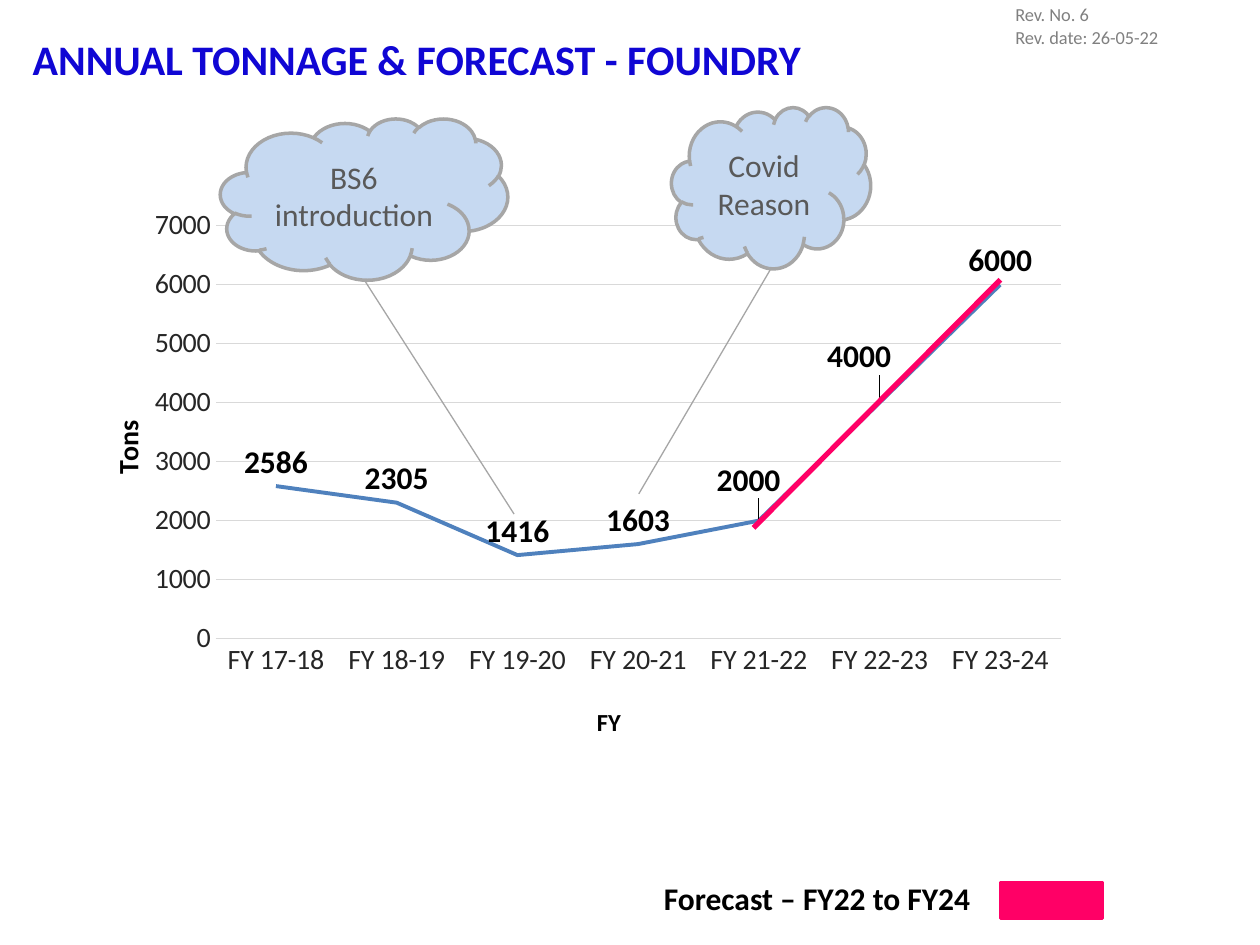
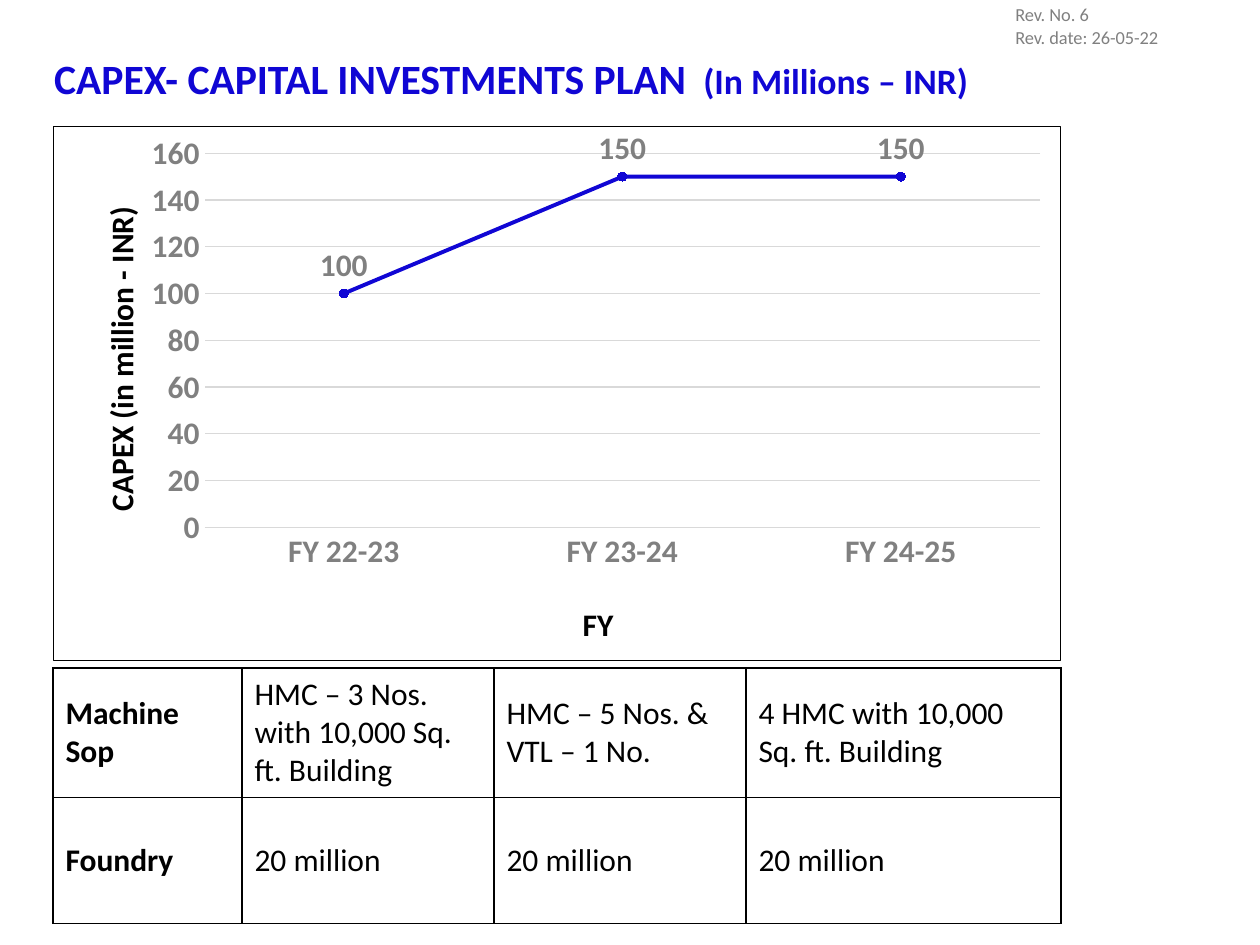
"""Build two slides on foundry tonnage and capital investment plans."""
import dataclasses

import lxml.etree
import pptx
import pptx.chart.data
import pptx.dml.color
import pptx.enum.chart
import pptx.enum.shapes
import pptx.enum.text
import pptx.oxml.ns
import pptx.util

COLS, ROWS = 20, 15
WIDE, HIGH = pptx.util.Inches(10), pptx.util.Inches(7.5)
qn = pptx.oxml.ns.qn
Kind = pptx.enum.chart.XL_CHART_TYPE
Middle = pptx.enum.text.MSO_ANCHOR.MIDDLE
Align = pptx.enum.text.PP_ALIGN
Form = pptx.enum.shapes.MSO_SHAPE


@dataclasses.dataclass(frozen=True)
class Theme:
    """Hold the colours, font and type sizes."""
    font: str = "Calibri"
    title: str = "1006D4"
    ink: str = "000000"
    dark: str = "262626"
    slate: str = "595959"
    grey: str = "808080"
    edge: str = "A6A6A6"
    grid: str = "D9D9D9"
    cloud: str = "C6D9F1"
    blue: str = "4F81BD"
    pink: str = "FF0066"
    head: float = 24
    long: float = 23.8
    unit: float = 20.4
    body: float = 18
    axis: float = 16
    small: float = 14
    note: float = 10.5


@dataclasses.dataclass(frozen=True)
class Plot:
    """Describe one line chart."""
    kind: int
    cats: tuple
    vals: tuple
    top: int
    step: int
    line: str
    area: tuple
    names: tuple
    tick: tuple
    label: str
    border: bool = False
    shifts: tuple = ()


THEME = Theme()


def rgb(code):
    """Turn a hex code into a colour."""
    return pptx.dml.color.RGBColor.from_string(code)


def cell(col, row):
    """Turn grid columns and rows into lengths."""
    return round(col * WIDE / COLS), round(row * HIGH / ROWS)


def box(left, top, wide, high):
    """Turn a grid area into left, top, width and height."""
    return cell(left, top) + cell(wide, high)


def style(font, size, color, bold=False):
    """Set the look of a font."""
    font.name, font.bold, font.size = THEME.font, bold, pptx.util.Pt(size)
    font.color.rgb = rgb(color)


def write(para, text, size, color, bold=False):
    """Add one run to a paragraph."""
    run = para.add_run()
    run.text = text
    style(run.font, size, color, bold)


def stroke(line, color, width):
    """Set the colour and width of a line."""
    line.color.rgb = rgb(color)
    line.width = pptx.util.Pt(width)


def node(parent, tag, index=None, **attrs):
    """Add an XML child, at an index if one is given."""
    child = lxml.etree.SubElement(parent, qn(tag), attrs)
    if index is not None:
        parent.insert(index, child)
    return child


def paint(parent, tag, color, width):
    """Add an XML line with a solid colour."""
    line = node(parent, tag, w=str(pptx.util.Pt(width)))
    node(node(line, "a:solidFill"), "a:srgbClr", val=color)


def place(parent, index, spots, edge=True):
    """Give a chart part a layout in shares of the chart."""
    for old in parent.findall(qn("c:layout")):
        parent.remove(old)
    plan = node(node(parent, "c:layout", index), "c:manualLayout")
    if len(spots) == 4:
        node(plan, "c:layoutTarget", val="inner")
    if edge:
        node(plan, "c:xMode", val="edge")
        node(plan, "c:yMode", val="edge")
    for key, spot in zip("xywh", spots):
        node(plan, "c:" + key, val=str(spot))


def title(slide, area, runs):
    """Fill and move the title placeholder."""
    shape = slide.shapes.title
    shape.left, shape.top, shape.width, shape.height = box(*area)
    frame = shape.text_frame
    frame.auto_size = pptx.enum.text.MSO_AUTO_SIZE.NONE
    frame.vertical_anchor = Middle
    para = frame.paragraphs[0]
    para.alignment = Align.LEFT
    for text, size in runs:
        write(para, text, size, THEME.title, True)


def label(slide, area, lines, size, color, bold=False):
    """Add a text box with one paragraph a line."""
    shape = slide.shapes.add_textbox(*box(*area))
    frame = shape.text_frame
    frame.word_wrap = True
    for index, text in enumerate(lines):
        para = frame.add_paragraph() if index else frame.paragraphs[0]
        write(para, text, size, color, bold)
    return shape


def stamp(slide):
    """Put the revision note on the shared layout."""
    note = label(slide, (15.92, -0.04, 3.58, 0.94),
                 ("Rev. No. 6", "Rev. date: 26-05-22"), THEME.note, THEME.grey)
    note.element.xpath("./p:nvSpPr/p:cNvPr")[0].set("id", "20")
    slide.slide_layout.shapes.element.append(note.element)


def block(slide, form, area, fill, edge, text=""):
    """Add a filled shape, with centred text if any."""
    shape = slide.shapes.add_shape(form, *box(*area))
    shape.shadow.inherit = False
    shape.fill.solid()
    shape.fill.fore_color.rgb = rgb(fill)
    stroke(shape.line, edge, 2)
    if text:
        shape.text_frame.word_wrap = True
        shape.text_frame.vertical_anchor = Middle
        para = shape.text_frame.paragraphs[0]
        para.alignment = Align.CENTER
        write(para, text, THEME.body, THEME.slate)


def link(slide, start, end, color, width):
    """Draw a straight line between two grid points."""
    line = slide.shapes.add_connector(
        pptx.enum.shapes.MSO_CONNECTOR.STRAIGHT, *cell(*start), *cell(*end))
    stroke(line.line, color, width)
    node(line.element.spPr, "a:effectLst")


def cloud(slide, area, text, end):
    """Add a cloud and a line from its foot."""
    left, top, wide, high = area
    link(slide, (left + wide / 2, top + high), end, THEME.edge, 0.75)
    block(slide, Form.CLOUD, area, THEME.cloud, THEME.edge, text)


def name(axis, text, size, spot, turn):
    """Give an axis a bold, placed title."""
    head = axis.axis_title
    write(head.text_frame.paragraphs[0], text, size, THEME.ink, True)
    for body in head.element.iter(qn("a:bodyPr")):
        body.set("rot", turn)
        body.set("vert", "horz")
    place(head.element, 1, spot)


def chart(slide, area, plot):
    """Add a line chart with labels and titled axes."""
    data = pptx.chart.data.CategoryChartData()
    data.categories = plot.cats
    data.add_series("Series 1", plot.vals)
    graph = slide.shapes.add_chart(plot.kind, *box(*area), data).chart
    graph.has_title = graph.has_legend = False
    style(graph.font, *plot.tick)
    frame = node(graph.element, "c:spPr")
    graph.element.find(qn("c:chart")).addnext(frame)
    node(frame, "a:noFill")
    if plot.border:
        paint(frame, "a:ln", THEME.ink, 0.75)
    else:
        node(node(frame, "a:ln"), "a:noFill")
    place(next(graph.element.iter(qn("c:plotArea"))), 0, plot.area)

    cat, val = graph.category_axis, graph.value_axis
    val.minimum_scale, val.maximum_scale, val.major_unit = 0, plot.top, plot.step
    val.has_major_gridlines = True
    stroke(val.major_gridlines.format.line, THEME.grid, 0.75)
    stroke(cat.format.line, THEME.grid, 0.75)
    val.format.line.fill.background()
    for axis, words, turn in zip((cat, val), plot.names, ("0", "-5400000")):
        axis.major_tick_mark = pptx.enum.chart.XL_TICK_MARK.NONE
        style(axis.tick_labels.font, *plot.tick)
        name(axis, *words, turn)

    graph.plots[0].vary_by_categories = False
    above = pptx.enum.chart.XL_LABEL_POSITION.ABOVE
    series = graph.plots[0].series[0]
    series.smooth = False
    stroke(series.format.line, plot.line, 2.25)
    if plot.kind == Kind.LINE_MARKERS:
        series.marker.style = pptx.enum.chart.XL_MARKER_STYLE.CIRCLE
        series.marker.size = 5
        series.marker.format.fill.solid()
        series.marker.format.fill.fore_color.rgb = rgb(plot.line)
        stroke(series.marker.format.line, plot.line, 0.75)
    tags = series.data_labels
    tags.show_value = True
    tags.position = above
    style(tags.font, THEME.body, plot.label, True)
    for index, shift in plot.shifts:
        tag = series.points[index].data_label
        style(tag.font, THEME.body, plot.label, True)
        tag.position = above
        part = series.data_labels._element.xpath(f"c:dLbl[c:idx/@val='{index}']")[0]
        place(part, 1, shift, edge=False)


def table(slide, area, cols, rows, cells):
    """Add a plain table with black borders and bold row heads."""
    frame = slide.shapes.add_table(len(rows), len(cols), *box(*area))
    grid = frame.table
    grid.first_row = grid.horz_banding = False
    for col, wide in zip(grid.columns, cols):
        col.width = cell(wide, 0)[0]
    for row, high, texts in zip(grid.rows, rows, cells):
        row.height = cell(0, high)[1]
        for index, (item, text) in enumerate(zip(row.cells, texts)):
            item.vertical_anchor = Middle
            write(item.text_frame.paragraphs[0], text, THEME.body, THEME.ink, index == 0)
    for part in frame.element.iter(qn("a:tcPr")):
        for side in "LRTB":
            paint(part, "a:ln" + side, THEME.ink, 1)
        node(part, "a:noFill")


def tonnage(slide):
    """Build the tonnage and forecast slide."""
    title(slide, (0.32, -0.36, 17.2, 2.58),
          [("ANNUAL TONNAGE & FORECAST - FOUNDRY", THEME.head)])
    years = tuple(f"FY {year}-{year + 1}" for year in range(17, 24))
    chart(slide, (1, 3.14, 16.16, 8.86), Plot(
        Kind.LINE, years, (2586, 2305, 1416, 1603, 2000, 4000, 6000),
        7000, 1000, THEME.blue, (0.15, 0.05, 0.83, 0.74),
        (("FY", THEME.small, (0.52, 0.9)), ("Tons", THEME.axis, (0.04, 0.39))),
        (THEME.axis, THEME.dark), THEME.ink,
        shifts=((4, (-0.01, -0.03)), (5, (-0.02, -0.04)))))
    label(slide, (10.34, 13.86, 5.5, 0.8), ("Forecast – FY22 to FY24",),
          THEME.body, THEME.ink, True)
    block(slide, Form.RECTANGLE, (15.88, 14.02, 1.62, 0.56), THEME.pink, THEME.pink)
    link(slide, (11.96, 8.38), (15.88, 4.44), THEME.pink, 3)
    cloud(slide, (10.66, 1.7, 3.16, 2.56), "Covid Reason", (10.14, 7.84))
    cloud(slide, (3.5, 1.88, 4.56, 2.56), "BS6 introduction", (8.16, 8.16))


def capex(slide):
    """Build the capital investment slide."""
    title(slide, (0.66, 0.52, 15.34, 1.42),
          [("CAPEX- CAPITAL INVESTMENTS PLAN ", THEME.long),
           (" (In Millions – INR)", THEME.unit)])
    years = tuple(f"FY {year}-{year + 1}" for year in range(22, 25))
    chart(slide, (0.84, 2, 16, 8.5), Plot(
        Kind.LINE_MARKERS, years, (100, 150, 150), 160, 20, THEME.title,
        (0.15, 0.05, 0.83, 0.7),
        (("FY", THEME.body, (0.52, 0.88)),
         ("CAPEX (in million - INR)", THEME.body, (0.04, 0.14))),
        (THEME.body, THEME.grey, True), THEME.grey, border=True))
    table(slide, (0.84, 10.6, 16, 4.06), (3, 4, 4, 5), (2.06, 2), (
        ("Machine Sop", "HMC – 3 Nos. with 10,000 Sq. ft. Building",
         "HMC – 5 Nos. & VTL – 1 No.", "4 HMC with 10,000 Sq. ft. Building"),
        ("Foundry",) + ("20 million",) * 3))


def main():
    """Build and save the slides."""
    deck = pptx.Presentation()
    deck.slide_width, deck.slide_height = WIDE, HIGH
    plain = deck.slide_layouts.get_by_name("Title Only")
    first, second = (deck.slides.add_slide(plain) for _ in range(2))
    stamp(first)
    tonnage(first)
    capex(second)
    deck.save("out.pptx")


if __name__ == "__main__":
    main()
